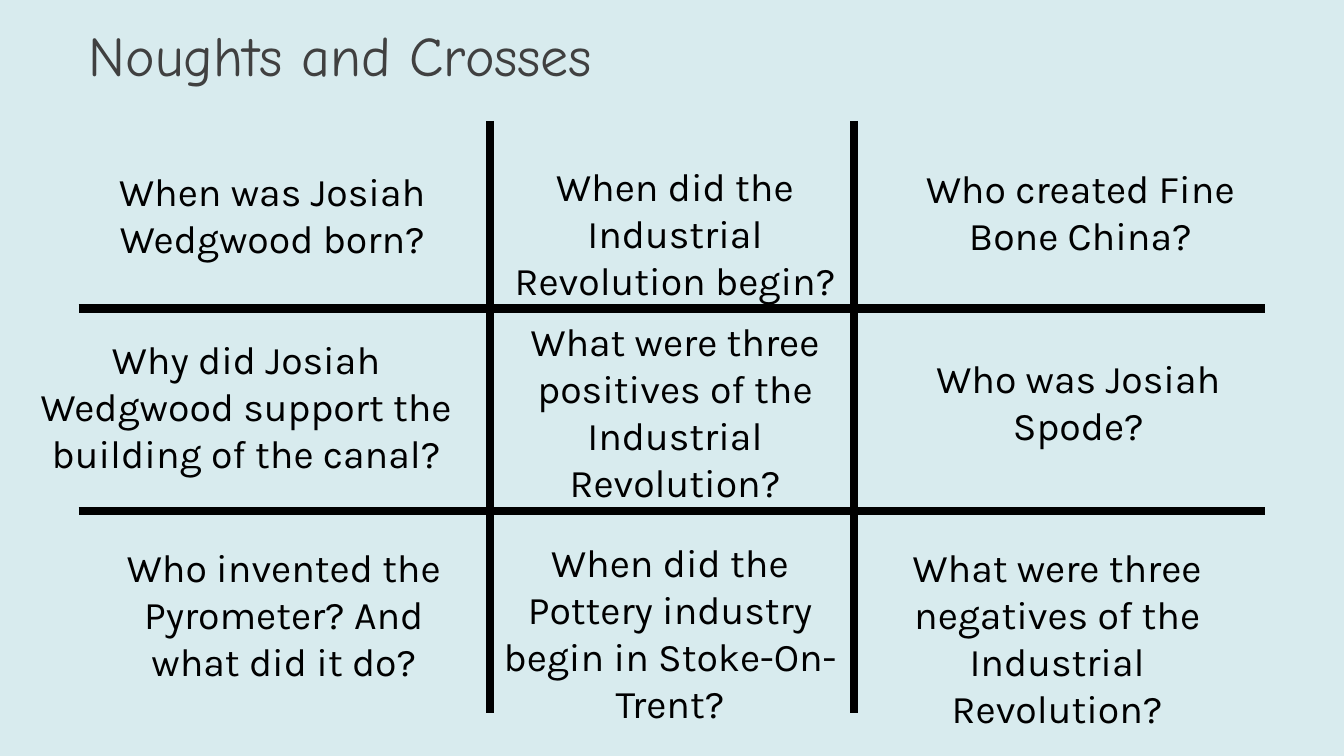
from lxml.etree import SubElement
from pptx import Presentation
from pptx.dml.color import RGBColor
from pptx.enum.shapes import MSO_CONNECTOR
from pptx.enum.text import MSO_ANCHOR, MSO_AUTO_SIZE, PP_ALIGN
from pptx.oxml.ns import qn
from pptx.util import Inches, Pt

LEFT, RIGHT, TOP, BASE = 0.78, 12.55, 1.2, 7.07
COLS = (4.86, 8.47)
ROWS = (3.06, 5.07)
WIDE, SLIM = 4.32, 3.57
CELLS = [
    (0.54, 1.61, WIDE, 1.04, "When was Josiah Wedgwood born?"),
    (4.91, 1.56, SLIM, 1.51, "When did the Industrial Revolution begin?"),
    (8.93, 1.58, SLIM, 1.04, "Who created Fine Bone China?"),
    (0.28, 3.28, WIDE, 1.51, "Why did Josiah Wedgwood support the building of the canal?"),
    (4.91, 3.1, SLIM, 1.99, "What were three positives of the Industrial Revolution?"),
    (8.91, 3.47, SLIM, 1.04, "Who was Josiah Spode?"),
    (1.03, 5.34, SLIM, 1.51, "Who invented the Pyrometer? And what did it do?"),
    (4.86, 5.29, SLIM, 1.99, "When did the Pottery industry begin in Stoke-On-Trent?"),
    (8.7, 5.34, SLIM, 1.99, "What were three negatives of the Industrial Revolution?"),
]


def paint(color, shade):
    """Set a colour format from a hex string."""
    color.rgb = RGBColor.from_string(shade)


def write(frame, text, font="Karla", size=28, shade="000000",
          align=PP_ALIGN.CENTER, anchor=MSO_ANCHOR.TOP,
          fit=MSO_AUTO_SIZE.SHAPE_TO_FIT_TEXT, space=None):
    """Fill a text frame with one formatted paragraph."""
    frame.word_wrap = True
    frame.auto_size = fit
    frame.vertical_anchor = anchor
    para = frame.paragraphs[0]
    para.alignment = align
    para.line_spacing = space
    run = para.add_run()
    run.text = text
    run.font.name = font
    run.font.size = Pt(size)
    paint(run.font.color, shade)


def head(slide, text):
    """Place and format the slide title."""
    title = slide.shapes.title
    title.left, title.top = Inches(LEFT), Inches(0.2)
    title.width, title.height = Inches(10.45), Inches(0.75)
    write(title.text_frame, text, font="Comic Neue", size=40, shade="404040",
          align=PP_ALIGN.LEFT, anchor=MSO_ANCHOR.MIDDLE,
          fit=MSO_AUTO_SIZE.NONE, space=0.9)


def bar(slide, *ends):
    """Draw one thick line of the grid."""
    line = slide.shapes.add_connector(MSO_CONNECTOR.STRAIGHT, *map(Inches, ends))
    line.line.width = Pt(6)
    paint(line.line.color, "000000")
    SubElement(line._element.spPr, qn("a:effectLst"))


def cell(slide, left, top, width, height, text):
    """Add one question to the grid."""
    box = slide.shapes.add_textbox(*map(Inches, (left, top, width, height)))
    write(box.text_frame, text)


def main():
    """Build the slide and save it."""
    deck = Presentation()
    deck.slide_width, deck.slide_height = Inches(13.33), Inches(7.5)
    slide = deck.slides.add_slide(deck.slide_layouts[5])
    slide.background.fill.solid()
    paint(slide.background.fill.fore_color, "D8EBEE")
    head(slide, "Noughts and Crosses")
    for col in COLS:
        bar(slide, col, TOP, col, BASE)
    for row in ROWS:
        bar(slide, LEFT, row, RIGHT, row)
    for item in CELLS:
        cell(slide, *item)
    deck.save("out.pptx")


if __name__ == "__main__":
    main()
